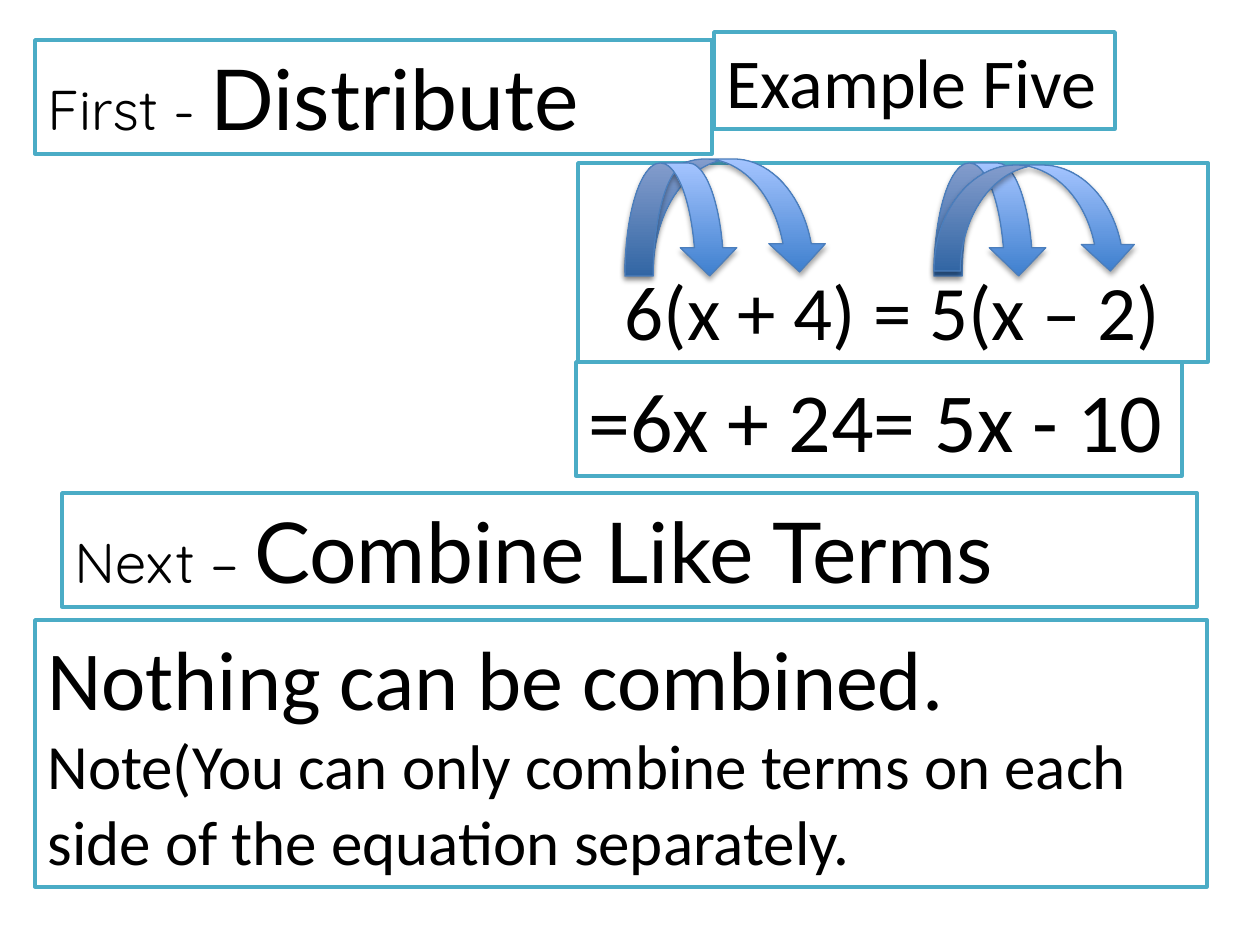
from lxml import etree
from pptx import Presentation
from pptx import util as u
from pptx.dml.color import RGBColor
from pptx.enum import shapes, text
from pptx.oxml.ns import qn

PX = 914400 / 126
COLORS = {
    "paper": "FFFFFF",
    "ink": "000000",
    "border": "4BACC6",
    "arrow_low": "3F80CE",
    "arrow_high": "A4C4FF",
    "arrow_line": "4B7EBC",
    "shadow": "000000",
}


def px(length):
    return u.Emu(round(length * PX))


def color(name):
    return RGBColor.from_string(COLORS[name])


class LessonSlide:
    def __init__(self, presentation):
        layout = presentation.slide_layouts.get_by_name("Title Only")
        self.slide = presentation.slides.add_slide(layout)

    def style_box(self, shape):
        shape.fill.solid()
        shape.fill.fore_color.rgb = color("paper")
        shape.line.color.rgb = color("border")
        shape.line.width = u.Pt(2)

    def fill_text(self, shape, paragraphs, align, anchor):
        """Each paragraph is a list of (text, size, font) runs."""
        frame = shape.text_frame
        frame.word_wrap = True
        frame.auto_size = text.MSO_AUTO_SIZE.NONE
        frame.vertical_anchor = anchor
        for index, runs in enumerate(paragraphs):
            paragraph = frame.paragraphs[0] if index == 0 else frame.add_paragraph()
            paragraph.alignment = align
            paragraph.font.color.rgb = color("ink")
            for words, size, font in runs:
                run = paragraph.add_run()
                run.text = words
                target = paragraph.font if len(runs) == 1 else run.font
                target.size = u.Pt(size)
                target.name = font

    def title(self, left, top, width, height, words, size):
        shape = self.slide.shapes.title
        shape.left, shape.top = px(left), px(top)
        shape.width, shape.height = px(width), px(height)
        self.style_box(shape)
        self.fill_text(shape, [[(words, size, "Calibri")]],
                       text.PP_ALIGN.LEFT, text.MSO_ANCHOR.TOP)

    def box(self, left, top, width, height, paragraphs,
            align=text.PP_ALIGN.LEFT, anchor=text.MSO_ANCHOR.TOP):
        shape = self.slide.shapes.add_shape(
            shapes.MSO_SHAPE.RECTANGLE, px(left), px(top), px(width), px(height))
        shape.shadow.inherit = False
        self.style_box(shape)
        self.fill_text(shape, paragraphs, align, anchor)

    def step(self, left, top, width, height, label, action):
        self.box(left, top, width, height,
                 [[(label, 32, "Quicksand"), (action, 48, "Lato")]])

    def arrow(self, left, top, width, height):
        shape = self.slide.shapes.add_shape(
            shapes.MSO_SHAPE.CURVED_DOWN_ARROW,
            px(left), px(top), px(width), px(height))
        shape.fill.gradient()
        shape.fill.gradient_angle = 90
        for stop, name, position in zip(
                shape.fill.gradient_stops, ("arrow_low", "arrow_high"), (0, 1)):
            stop.color.rgb = color(name)
            stop.position = position
        shape.line.color.rgb = color("arrow_line")
        shape.line.width = u.Pt(0.75)
        self.drop_shadow(shape)

    def drop_shadow(self, shape):
        shape.shadow.inherit = False
        effects = shape.element.spPr.find(qn("a:effectLst"))
        shadow = etree.SubElement(
            effects, qn("a:outerShdw"), blurRad=str(u.Pt(3.1)),
            dist=str(u.Pt(1.8)), dir="5400000", rotWithShape="0")
        shade = etree.SubElement(shadow, qn("a:srgbClr"), val=COLORS["shadow"])
        etree.SubElement(shade, qn("a:alpha"), val="35000")


def main():
    presentation = Presentation()
    presentation.slide_width, presentation.slide_height = px(1260), px(945)
    lesson = LessonSlide(presentation)

    # Heading and first step
    lesson.title(714, 32, 401, 97, "Example Five", 40)
    lesson.step(35, 40, 677, 114, "First - ", "Distribute")

    # Equation and its expanded form
    lesson.box(576, 362, 606, 114, [[("=6x + 24= 5x - 10", 48, "Calibri")]])
    lesson.box(578, 163, 630, 199, [[("6(x + 4) = 5(x – 2)", 44, "Calibri")]],
               text.PP_ALIGN.CENTER, text.MSO_ANCHOR.BOTTOM)

    # Distribution arrows from each factor to its two terms
    lesson.arrow(934, 163, 113, 113)
    lesson.arrow(625, 159, 203, 113)
    lesson.arrow(934, 165, 203, 106)
    lesson.arrow(625, 163, 113, 113)

    # Second step and its note
    lesson.step(62, 493, 1135, 114, "Next – ", "Combine Like Terms")
    lesson.box(35, 620, 1172, 267, [
        [("Nothing can be combined.", 48, "Calibri")],
        [("Note(You can only combine terms on each side of the equation "
          "separately.", 36, "Calibri")],
    ])

    presentation.save("out.pptx")


if __name__ == "__main__":
    main()
